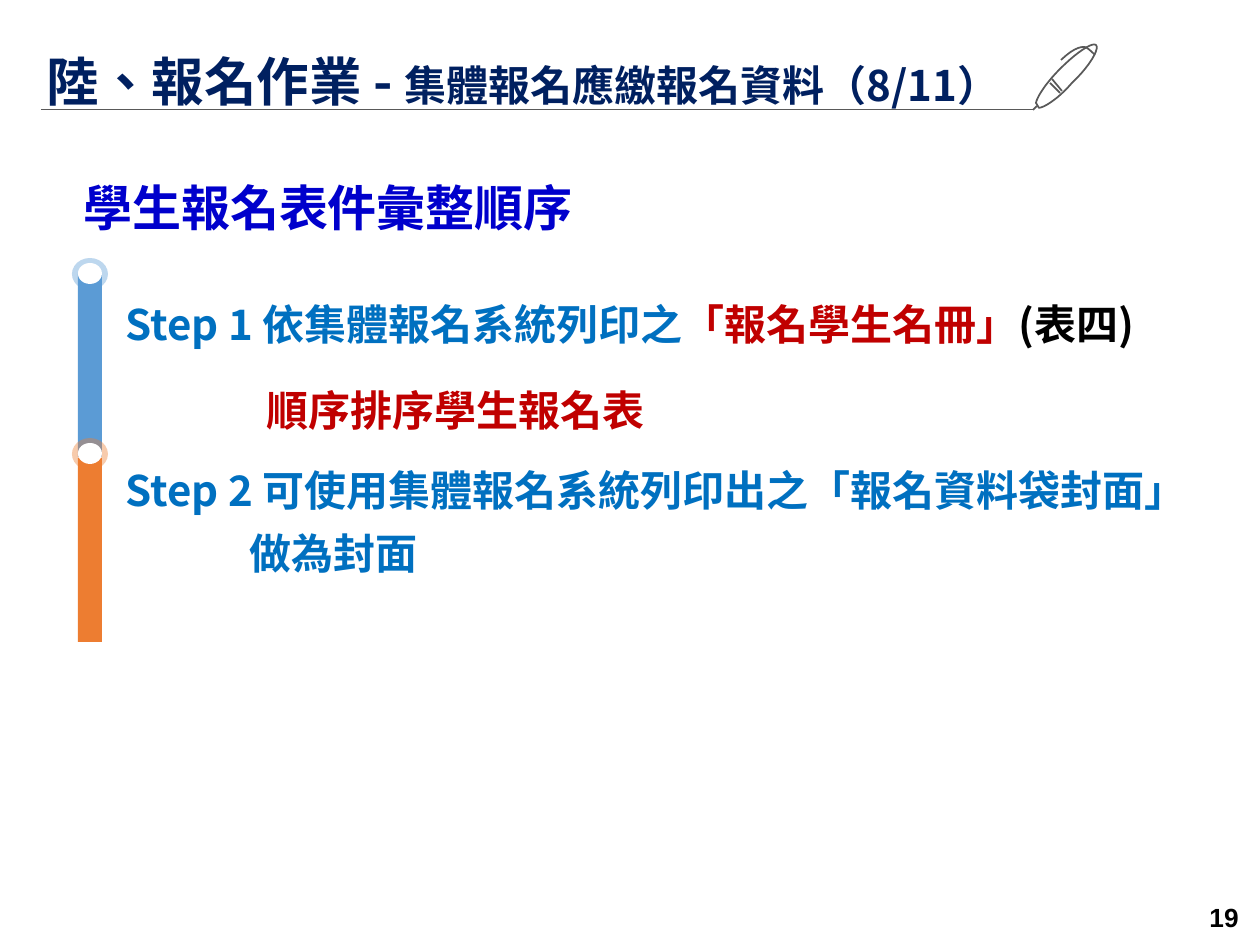
from pptx import Presentation
from pptx.dml.color import RGBColor
from pptx.enum.shapes import MSO_CONNECTOR, MSO_SHAPE
from pptx.enum.text import MSO_ANCHOR, MSO_AUTO_SIZE, PP_ALIGN
from pptx.oxml.ns import qn
from pptx.util import Pt
from lxml.etree import SubElement

PX = 914400 / 126
CJK = "Noto Sans CJK SC"
COLORS = {
    "navy": "002060", "heading": "0000CC", "step": "0070C0", "red": "C00000",
    "black": "000000", "white": "FFFFFF", "gray": "595959",
    "blue": "5B9BD5", "orange": "ED7D31",
}


def px(*lengths):
    return [round(length * PX) for length in lengths]


def add_text(paragraph, text, size=24, color="step", font=CJK):
    run = paragraph.add_run()
    run.text = text
    run.font.size = Pt(size)
    run.font.bold = True
    run.font.name = font
    run.font.color.rgb = RGBColor.from_string(COLORS[color])
    properties = run.font._element
    properties.set("lang", "zh-TW")
    SubElement(properties, qn("a:ea")).set("typeface", font)


presentation = Presentation()
presentation.slide_width, presentation.slide_height = px(1260, 945)
slide = presentation.slides.add_slide(presentation.slide_layouts[1])
shapes = slide.shapes

# Title
title = shapes.title
title.left, title.top, title.width, title.height = px(34, 50, 994, 60)
title.text_frame.auto_size = MSO_AUTO_SIZE.NONE
title.text_frame.vertical_anchor = MSO_ANCHOR.TOP
title_line = title.text_frame.paragraphs[0]
title_line.alignment = PP_ALIGN.LEFT
title_line.line_spacing = 0.9
add_text(title_line, "陸、報名作業 - ", size=30, color="navy")
add_text(title_line, "集體報名應繳報名資料（8/11）", color="navy")

# Rule under the title
rule = shapes.add_connector(MSO_CONNECTOR.STRAIGHT, *px(41, 109, 1033, 109))
rule.line.color.rgb = RGBColor.from_string(COLORS["gray"])
rule.line.width = Pt(0.5)
SubElement(rule._element.spPr, qn("a:effectLst"))

# Pen: each stroke is a start point, then straight (1 point) or cubic (3 points) pieces
pen_strokes = [
    ([(1060, 93), [(1050, 83)]], False),
    ([(1052, 79), [(1062, 91)]], False),
    ([(1096, 45), [(1092, 42), (1076, 53), (1060, 69)],
      [(1046, 83), (1037, 97), (1036, 103)], [(1039, 108)],
      [(1046, 107), (1060, 97), (1072, 83)],
      [(1089, 67), (1100, 49), (1096, 45)]], True),
    ([(1037, 106), [(1033, 110)]], False),
    ([(1095, 55), [(1095, 55), (1090, 50), (1087, 48)],
      [(1087, 48), (1080, 42), (1061, 60)]], False),
]
pen_builder = shapes.build_freeform(*px(*pen_strokes[0][0][0]))
for (start, *pieces), closed in pen_strokes:
    pen_builder.move_to(*px(*start))
    points = [start]
    for piece in pieces:
        if len(piece) == 1:
            points += piece
            continue
        controls = [points[-1], *piece]
        for t in [step / 10 for step in range(1, 11)]:
            weights = ((1 - t) ** 3, 3 * t * (1 - t) ** 2, 3 * t * t * (1 - t), t ** 3)
            points.append(tuple(sum(w * c[axis] for w, c in zip(weights, controls))
                                for axis in (0, 1)))
    pen_builder.add_line_segments([px(*point) for point in points[1:]], close=closed)
pen = pen_builder.convert_to_shape()
pen.shadow.inherit = False
pen.fill.background()
pen.line.color.rgb = RGBColor.from_string(COLORS["gray"])
pen.line.width = Pt(1)

# Section heading
heading = shapes.add_textbox(*px(71, 171, 520, 72)).text_frame
heading.word_wrap = False
add_text(heading.paragraphs[0], "學生報名表件彙整順序", size=28, color="heading")

# Steps: indent in px, space before in points, coloured text
steps = [
    (0, 0, [("Step 1 依集體報名系統列印之", "step"),
            ("「報名學生名冊」", "red"), ("(表四)", "black")]),
    (141, 20.5, [("順序排序學生報名表", "red")]),
    (0, 17, [("Step 2 可使用集體報名系統列印出之「報名資料袋封面」", "step")]),
    (124, 7, [("做為封面", "step")]),
]
body = slide.placeholders[1]
body.left, body.top, body.width, body.height = px(113, 263, 1107, 321)
body.text_frame.auto_size = MSO_AUTO_SIZE.NONE
body.text_frame.vertical_anchor = MSO_ANCHOR.BOTTOM
for number, (indent, space, parts) in enumerate(steps):
    line = body.text_frame.add_paragraph() if number else body.text_frame.paragraphs[0]
    line.space_before = Pt(space)
    line.line_spacing = 1.0
    properties = line._p.get_or_add_pPr()
    properties.set("marL", str(px(indent)[0]))
    properties.set("indent", "0")
    SubElement(properties, qn("a:buNone"))
    for text, color in parts:
        add_text(line, text, color=color)

# Timeline: bars first, then a ring with a white centre at the top of each
bars = [(MSO_SHAPE.RECTANGLE, (78, 273 + 185 * i, 24, 184), color, None)
        for i, color in enumerate(("blue", "orange"))]
rings = []
for i, color in enumerate(("blue", "orange")):
    rings.append((MSO_SHAPE.OVAL, (72, 258 + 180 * i, 36, 32), color, 40))
    rings.append((MSO_SHAPE.OVAL, (78, 263 + 180 * i, 24, 21), "white", None))
for kind, place, color, opacity in bars + rings:
    marker = shapes.add_shape(kind, *px(*place))
    marker.shadow.inherit = False
    marker.fill.solid()
    marker.fill.fore_color.rgb = RGBColor.from_string(COLORS[color])
    marker.line.fill.background()
    if opacity:
        fill_color = marker._element.spPr.find(qn("a:solidFill"))[0]
        SubElement(fill_color, qn("a:alpha")).set("val", str(opacity * 1000))

# Page number
page = shapes.add_textbox(*px(968, 898, 283, 38)).text_frame
page.word_wrap = True
page.vertical_anchor = MSO_ANCHOR.MIDDLE
page.paragraphs[0].alignment = PP_ALIGN.RIGHT
add_text(page.paragraphs[0], "19", size=15, color="black", font="Arial")

presentation.save("out.pptx")
